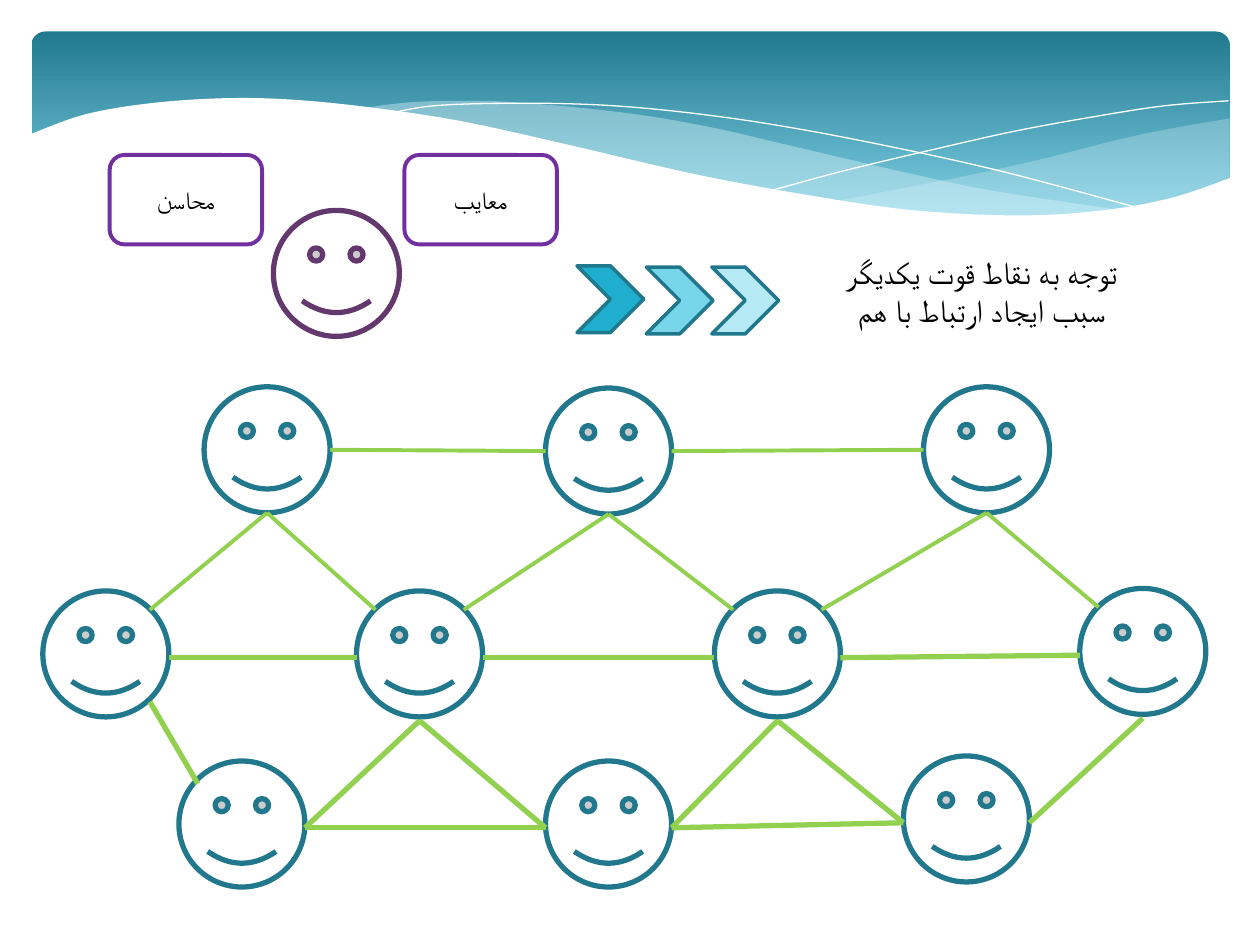
from lxml.etree import SubElement
from pptx import Presentation
from pptx.dml.color import RGBColor
from pptx.enum.shapes import MSO_CONNECTOR, MSO_SHAPE
from pptx.enum.text import MSO_ANCHOR, MSO_AUTO_SIZE, PP_ALIGN
from pptx.oxml.ns import qn
from pptx.util import Inches, Pt

WHITE = RGBColor(0xFF, 0xFF, 0xFF)
BLACK = RGBColor(0x00, 0x00, 0x00)
TEAL = RGBColor(0x21, 0x78, 0x8D)
BANNER_TOP = RGBColor(0x22, 0x7A, 0x8F)
BANNER_END = RGBColor(0x7A, 0xCB, 0xE0)
MIST = RGBColor(0xDE, 0xF5, 0xFA)
PLUM = RGBColor(0x63, 0x38, 0x6C)
PURPLE = RGBColor(0x70, 0x30, 0xA0)
GREEN = RGBColor(0x92, 0xD0, 0x50)
CHEVRON_FILLS = [RGBColor(0x1F, 0xAE, 0xCD), RGBColor(0x78, 0xD6, 0xEA),
                 RGBColor(0xB5, 0xE9, 0xF4)]
FONT = "Cabin"
FACE = 1  # diameter of a face, in inches


def smooth(knots, steps=8):
    """Points of a Catmull-Rom curve through the knots; two knots give a line."""
    if len(knots) == 2:
        return knots
    ends = [knots[0], *knots, knots[-1]]
    points = [knots[0]]
    for a, b, c, d in zip(ends, ends[1:], ends[2:], ends[3:]):
        for t in (i / steps for i in range(1, steps + 1)):
            points.append(tuple(
                (2 * q + (r - p) * t + (2 * p - 5 * q + 4 * r - s) * t ** 2
                 + (3 * q - p - 3 * r + s) * t ** 3) / 2
                for p, q, r, s in zip(a, b, c, d)))
    return points


def style(sp, fill=None, line=None, width=0):
    sp.shadow.inherit = False
    if fill is None:
        sp.fill.background()
    else:
        sp.fill.solid()
        sp.fill.fore_color.rgb = fill
    if line is None:
        sp.line.fill.background()
    else:
        sp.line.color.rgb = line
        sp.line.width = Pt(width)


prs = Presentation()
prs.slide_width, prs.slide_height = Inches(10), Inches(7.5)
s = prs.slides.add_slide(prs.slide_layouts[6])

# Banner
sp = s.shapes.add_shape(MSO_SHAPE.ROUNDED_RECTANGLE, Inches(0.25), Inches(0.25),
                        Inches(9.51), Inches(1.56))
style(sp)
sp.adjustments[0] = 0.07
sp.fill.gradient()
sp.fill.gradient_angle = 270
for stop, color, position in zip(sp.fill.gradient_stops, (BANNER_TOP, BANNER_END), (0, 0.9)):
    stop.color.rgb, stop.position = color, position

# Waves: curves that make the outline, fill, opacity in percent, line
WAVES = [
    ([[(9.76, 0.94), (9.35, 1.01), (8.91, 1.1), (8.32, 1.25), (7.79, 1.37),
       (7.29, 1.47), (6.61, 1.6)],
      [(6.61, 1.6), (7.05, 1.65), (7.57, 1.7), (8.03, 1.72), (8.54, 1.7),
       (8.97, 1.65), (9.35, 1.56), (9.76, 1.41)]], MIST, 29, None),
    ([[(8.93, 1.67), (8.37, 1.59), (7.75, 1.49), (7.06, 1.34), (6.29, 1.16),
       (5.69, 1.02), (5.14, 0.92), (4.65, 0.86), (4.2, 0.82), (3.8, 0.8),
       (3.28, 0.81), (2.86, 0.86)],
      [(2.86, 0.86), (3.42, 0.94), (4.04, 1.06), (4.91, 1.26), (5.66, 1.43),
       (6.34, 1.56), (6.95, 1.65), (7.48, 1.7), (8.07, 1.73), (8.48, 1.72),
       (8.93, 1.67)]], MIST, 40, None),
    ([[(3.09, 0.9), (3.44, 0.84), (4.01, 0.82), (4.69, 0.83), (5.33, 0.88),
       (6.08, 0.98), (6.95, 1.14), (7.95, 1.36), (9.07, 1.66)]], None, 100, WHITE),
    ([[(6.13, 1.51), (6.72, 1.35), (7.48, 1.17), (8.06, 1.04), (8.66, 0.93),
       (9.24, 0.84), (9.75, 0.8)]], None, 100, WHITE),
    ([[(9.77, 1.41), (9.3, 1.57), (8.75, 1.67), (8.09, 1.71), (7.26, 1.67),
       (6.48, 1.56), (5.55, 1.39), (4.47, 1.14), (3.65, 0.96), (2.92, 0.85),
       (2.3, 0.79), (1.77, 0.78), (1.19, 0.82), (0.67, 0.91), (0.23, 1.07)],
      [(0.23, 2.24), (9.77, 2.24)]], WHITE, 100, None),
]
for curves, fill, opacity, line in WAVES:
    points = [(Inches(x), Inches(y)) for knots in curves for x, y in smooth(knots)]
    builder = s.shapes.build_freeform(*points[0])
    builder.add_line_segments(points[1:], close=fill is not None)
    sp = builder.convert_to_shape()
    style(sp, fill, line)
    if opacity < 100:
        color = sp._element.spPr.find(qn("a:solidFill")).find(qn("a:srgbClr"))
        SubElement(color, qn("a:alpha"), val=str(opacity * 1000))

# Faces: left and top of each
FACES = {
    "lead": (2.17, 1.67),
    "top1": (1.62, 3.07), "top2": (4.33, 3.08), "top3": (7.33, 3.07),
    "mid1": (0.34, 4.69), "mid2": (2.83, 4.69), "mid3": (5.67, 4.69), "mid4": (8.57, 4.67),
    "low1": (1.42, 6.04), "low2": (4.33, 6.04), "low3": (7.17, 6),
}
for name, (x, y) in FACES.items():
    sp = s.shapes.add_shape(MSO_SHAPE.SMILEY_FACE, Inches(x), Inches(y),
                            Inches(FACE), Inches(FACE))
    style(sp, WHITE, PLUM if name == "lead" else TEAL, 3)

# Labels beside the lead face
for x, label in [(0.87, "محاسن"), (3.21, "معایب")]:
    sp = s.shapes.add_shape(MSO_SHAPE.ROUNDED_RECTANGLE, Inches(x), Inches(1.23),
                            Inches(1.21), Inches(0.71))
    style(sp, None, PURPLE, 2.25)
    tf = sp.text_frame
    tf.word_wrap = True
    tf.vertical_anchor = MSO_ANCHOR.MIDDLE
    p = tf.paragraphs[0]
    p.alignment = PP_ALIGN.CENTER
    p._p.get_or_add_pPr().set("rtl", "1")
    r = p.add_run()
    r.text = label
    r.font.name, r.font.size = FONT, Pt(14)
    r.font.color.rgb = BLACK

# Chevrons
for x, y, fill in zip((4.58, 5.13, 5.65), (2.11, 2.12, 2.12), CHEVRON_FILLS):
    sp = s.shapes.add_shape(MSO_SHAPE.CHEVRON, Inches(x), Inches(y), Inches(0.53), Inches(0.53))
    style(sp, fill, TEAL, 2)

# Message
tb = s.shapes.add_textbox(Inches(6.38), Inches(1.96), Inches(2.82), Inches(0.71))
tf = tb.text_frame
tf.word_wrap = False
tf.auto_size = MSO_AUTO_SIZE.SHAPE_TO_FIT_TEXT
for i, text in enumerate(["توجه به نقاط قوت یکدیگر", "سبب ایجاد ارتباط با هم"]):
    p = tf.add_paragraph() if i else tf.paragraphs[0]
    p.alignment = PP_ALIGN.CENTER
    p._p.get_or_add_pPr().set("rtl", "1")
    r = p.add_run()
    r.text = text
    r.font.name, r.font.size = FONT, Pt(18)
    r.font.color.rgb = BLACK

# Links: points on the rim of a face as shares of its diameter
RIM = {"top": (0.5, 0), "left": (0, 0.5), "bottom": (0.5, 1), "right": (1, 0.5),
       "top left": (0.15, 0.15), "top right": (0.85, 0.15), "bottom right": (0.85, 0.85)}
LOWER_LINKS = [
    ("mid1", "right", "mid2", "left"), ("mid2", "right", "mid3", "left"),
    ("mid3", "right", "mid4", "left"), ("mid1", "bottom right", "low1", "top left"),
    ("low1", "right", "low2", "left"), ("low2", "right", "low3", "left"),
    ("mid2", "bottom", "low1", "right"), ("mid2", "bottom", "low2", "left"),
    ("mid3", "bottom", "low2", "right"), ("mid3", "bottom", "low3", "left"),
    ("mid4", "bottom", "low3", "right"),
]
UPPER_LINKS = [
    ("top1", "bottom", "mid1", "top right"), ("top1", "bottom", "mid2", "top left"),
    ("top2", "bottom", "mid2", "top right"), ("top2", "bottom", "mid3", "top left"),
    ("top3", "bottom", "mid3", "top right"), ("top3", "bottom", "mid4", "top left"),
    ("top1", "right", "top2", "left"), ("top2", "right", "top3", "left"),
]
for links, width, drop in [(LOWER_LINKS, 3, 0.03), (UPPER_LINKS, 2.25, 0)]:
    for start, start_side, end, end_side in links:
        ends = []
        for face, side in [(start, start_side), (end, end_side)]:
            (x, y), (dx, dy) = FACES[face], RIM[side]
            ends += [Inches(x + dx * FACE), Inches(y + dy * FACE + drop)]
        line = s.shapes.add_connector(MSO_CONNECTOR.STRAIGHT, *ends)
        line.line.color.rgb = GREEN
        line.line.width = Pt(width)
        SubElement(line._element.spPr, qn("a:effectLst"))

prs.save("out.pptx")
